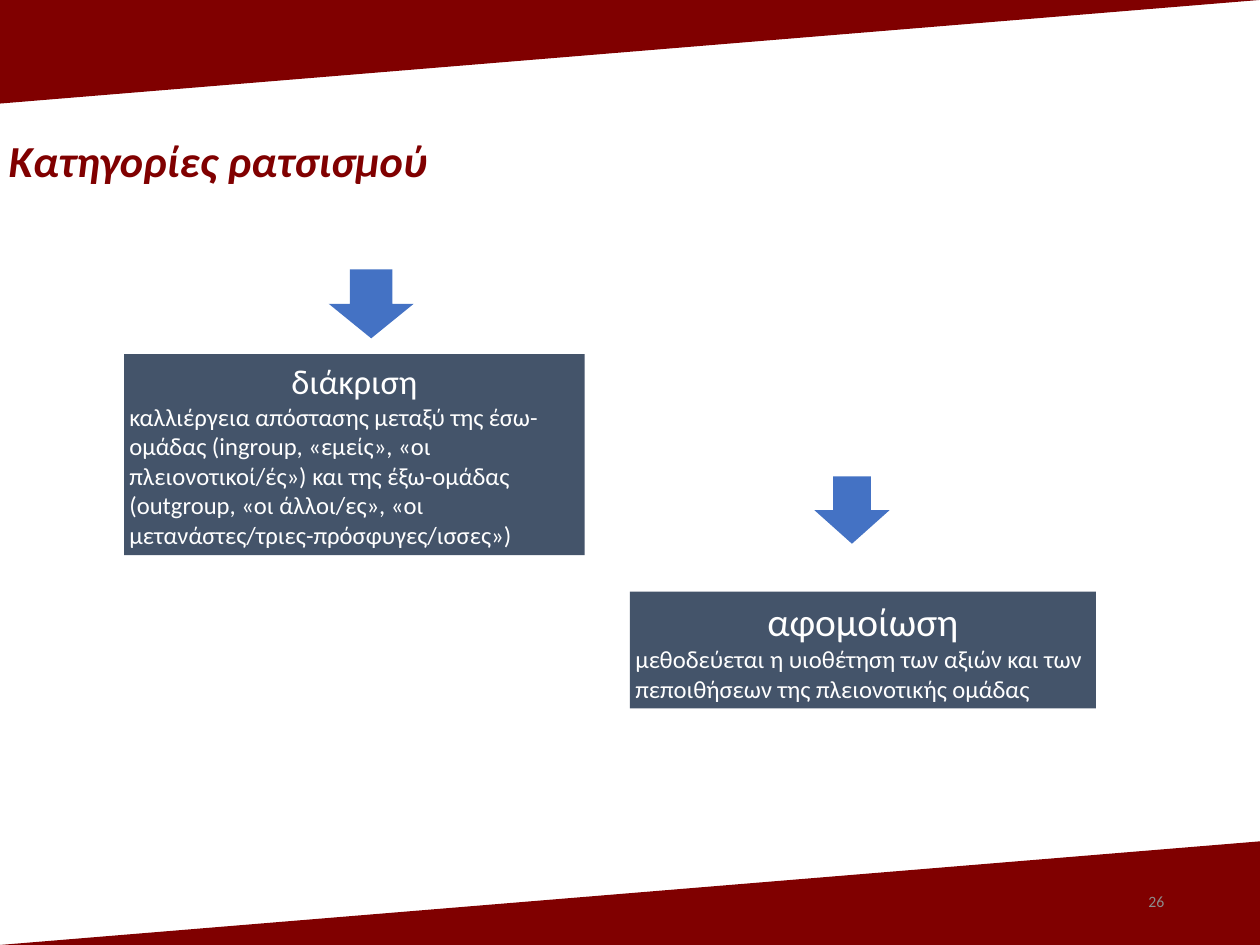
import pptx
import pptx.util
import pptx.dml.color
import pptx.enum.shapes
import pptx.enum.text

Inches = pptx.util.Inches
SHAPES = pptx.enum.shapes.MSO_SHAPE
ALIGN = pptx.enum.text.PP_ALIGN
ANCHOR = pptx.enum.text.MSO_ANCHOR

WIDTH, HEIGHT = 14.22, 10.67
BAND_HEIGHT = 1.17
BOX_INSET = 0.06
FONT = "Calibri"
COLORS = {
    "band": "800000",
    "box": "44546A",
    "arrow": "4472C4",
    "white": "FFFFFF",
    "number": "8C8C8C",
}

TITLE = "Κατηγορίες ρατσισμού"
PAGE_NUMBER = "26"
BANDS = [(HEIGHT - BAND_HEIGHT, "flipH"), (0, "flipV")]
CATEGORIES = [
    {
        "heading": "διάκριση",
        "heading_size": 28,
        "body": "καλλιέργεια απόστασης μεταξύ της έσω-ομάδας (ingroup, «εμείς», "
                "«οι πλειονοτικοί/ές») και της έξω-ομάδας (outgroup, «οι άλλοι/ες», "
                "«οι μετανάστες/τριες-πρόσφυγες/ισσες»)",
        "box": (1.4, 4, 5.2, 2.27),
        "arrow": (3.71, 3.04, 0.96, 0.78),
    },
    {
        "heading": "αφομοίωση",
        "heading_size": 32,
        "body": "μεθοδεύεται η υιοθέτηση των αξιών και των πεποιθήσεων "
                "της πλειονοτικής ομάδας",
        "box": (7.11, 6.68, 5.26, 1.32),
        "arrow": (9.19, 5.38, 0.85, 0.76),
    },
]


def rgb(name):
    return pptx.dml.color.RGBColor.from_string(COLORS[name])


def add_filled(slide, kind, place, color):
    shape = slide.shapes.add_shape(kind, *map(Inches, place))
    shape.shadow.inherit = False
    shape.fill.solid()
    shape.fill.fore_color.rgb = rgb(color)
    shape.line.fill.background()
    return shape


def format_paragraph(paragraph, size, color, align=ALIGN.LEFT, emphasis=False):
    paragraph.alignment = align
    for run in paragraph.runs:
        run.font.name = FONT
        run.font.size = pptx.util.Pt(size)
        run.font.color.rgb = rgb(color)
        run.font.bold = run.font.italic = emphasis


def add_text(slide, place, text, anchor):
    frame = slide.shapes.add_textbox(*map(Inches, place)).text_frame
    frame.word_wrap = True
    frame.vertical_anchor = anchor
    frame.text = text
    return frame.paragraphs[0]


def add_category(slide, category):
    frame = add_filled(slide, SHAPES.RECTANGLE, category["box"], "box").text_frame
    frame.word_wrap = True
    frame.vertical_anchor = ANCHOR.MIDDLE
    for side in ("left", "top", "right", "bottom"):
        setattr(frame, f"margin_{side}", Inches(BOX_INSET))
    frame.text = category["heading"] + "\n" + category["body"]
    heading, body = frame.paragraphs
    format_paragraph(heading, category["heading_size"], "white", ALIGN.CENTER)
    format_paragraph(body, 20, "white")
    add_filled(slide, SHAPES.DOWN_ARROW, category["arrow"], "arrow")


def main():
    """Build the slide on the categories of racism."""
    presentation = pptx.Presentation()
    presentation.slide_width = Inches(WIDTH)
    presentation.slide_height = Inches(HEIGHT)
    slide = presentation.slides.add_slide(presentation.slide_layouts[6])

    for top, flip in BANDS:
        place = (0, top, WIDTH, BAND_HEIGHT)
        band = add_filled(slide, SHAPES.RIGHT_TRIANGLE, place, "band")
        band.element.spPr.xfrm.set(flip, "1")

    title = add_text(slide, (0, 1.52, 14, 0.72), TITLE, ANCHOR.TOP)
    title.line_spacing = 0.9
    format_paragraph(title, 36, "band", emphasis=True)

    for category in CATEGORIES:
        add_category(slide, category)

    number = add_text(slide, (10.04, 9.89, 3.2, 0.57), PAGE_NUMBER, ANCHOR.MIDDLE)
    format_paragraph(number, 12.8, "number", ALIGN.RIGHT)

    presentation.save("out.pptx")


if __name__ == "__main__":
    main()
